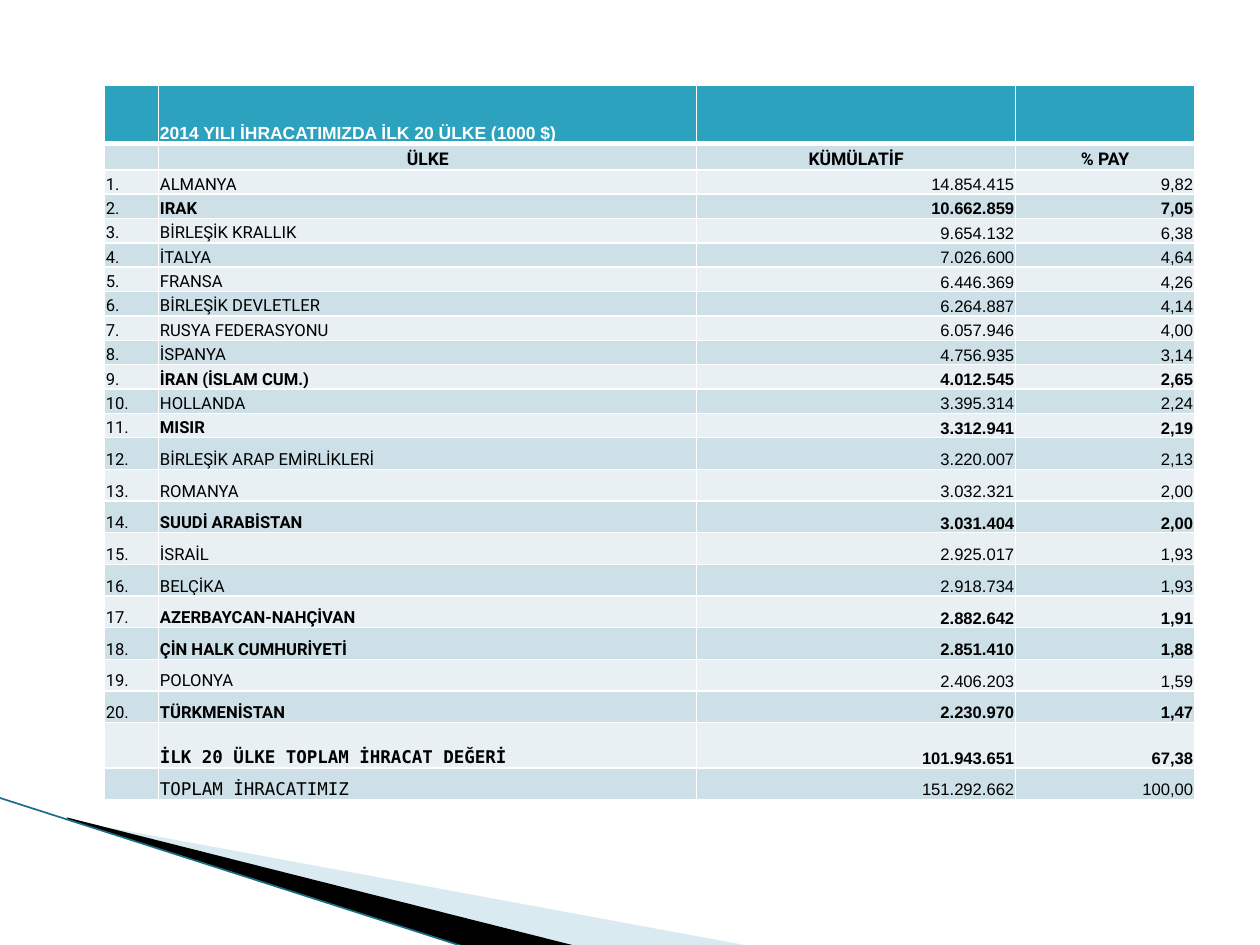
"""Build a slide with Turkey's top 20 export countries of 2014 as a table."""
from lxml.etree import SubElement
from pptx import Presentation
from pptx.dml.color import RGBColor as Color
from pptx.enum.shapes import MSO_CONNECTOR as Connector
from pptx.enum.text import MSO_ANCHOR as Anchor, PP_ALIGN as Align
from pptx.oxml.ns import qn
from pptx.util import Inches, Pt

COLORS = {"header": "2DA2BF", "dark band": "CDE0E8", "light band": "E8F0F4",
          "white": "FFFFFF", "black": "000000", "pale wedge": "A0CBDC", "edge": "1A6E82"}
COUNTRIES = [
    ("ALMANYA", "14.854.415", "9,82"),
    ("IRAK", "10.662.859", "7,05"),
    ("BİRLEŞİK KRALLIK", "9.654.132", "6,38"),
    ("İTALYA", "7.026.600", "4,64"),
    ("FRANSA", "6.446.369", "4,26"),
    ("BİRLEŞİK DEVLETLER", "6.264.887", "4,14"),
    ("RUSYA FEDERASYONU", "6.057.946", "4,00"),
    ("İSPANYA", "4.756.935", "3,14"),
    ("İRAN (İSLAM CUM.)", "4.012.545", "2,65"),
    ("HOLLANDA", "3.395.314", "2,24"),
    ("MISIR", "3.312.941", "2,19"),
    ("BİRLEŞİK ARAP EMİRLİKLERİ", "3.220.007", "2,13"),
    ("ROMANYA", "3.032.321", "2,00"),
    ("SUUDİ ARABİSTAN", "3.031.404", "2,00"),
    ("İSRAİL", "2.925.017", "1,93"),
    ("BELÇİKA", "2.918.734", "1,93"),
    ("AZERBAYCAN-NAHÇİVAN", "2.882.642", "1,91"),
    ("ÇİN HALK CUMHURİYETİ", "2.851.410", "1,88"),
    ("POLONYA", "2.406.203", "1,59"),
    ("TÜRKMENİSTAN", "2.230.970", "1,47"),
]
BOLD_RANKS = {2, 9, 11, 14, 17, 18, 20}

deck = Presentation()
deck.slide_width, deck.slide_height = Inches(10), Inches(7.5)
unit_x, unit_y = deck.slide_width / 1000, deck.slide_height / 1000
slide = deck.slides.add_slide(deck.slide_layouts[6])

wedges = [
    ("pale wedge", 40, [(55, 868), (595, 1001), (456, 1001), (55, 867)]),
    ("black", 100, [(53, 865), (457, 1001), (372, 1003), (54, 867)]),
]
for name, opacity, points in wedges:
    builder = slide.shapes.build_freeform(*points[0], scale=(unit_x, unit_y))
    builder.add_line_segments(points[1:], close=True)
    wedge = builder.convert_to_shape()
    wedge.shadow.inherit = False
    wedge.line.fill.background()
    wedge.fill.solid()
    wedge.fill.fore_color.rgb = Color.from_string(COLORS[name])
    if opacity < 100:
        tint = wedge._element.spPr.find(qn("a:solidFill"))[0]
        SubElement(tint, qn("a:alpha"), val=str(opacity * 1000))

edge = slide.shapes.add_connector(Connector.STRAIGHT, round(-unit_x), round(844 * unit_y),
                                  round(371 * unit_x), round(1003 * unit_y))
edge.line.color.rgb = Color.from_string(COLORS["edge"])
edge.line.width = Pt(0.95)
SubElement(edge._element.spPr, qn("a:effectLst"))

rows = [("", "2014 YILI İHRACATIMIZDA İLK 20 ÜLKE (1000 $)", "", ""),
        ("", "ÜLKE", "KÜMÜLATİF", "% PAY")]
rows += [(f"{rank}.", *country) for rank, country in enumerate(COUNTRIES, 1)]
rows += [("", "İLK 20 ÜLKE TOPLAM İHRACAT DEĞERİ", "101.943.651", "67,38"),
         ("", "TOPLAM İHRACATIMIZ", "151.292.662", "100,00")]
column_widths = [43, 427, 253, 142]
row_heights = [61, 28] + [25.8] * 11 + [33.5] * 9 + [48, 33.5]
total_row = len(rows) - 2

table = slide.shapes.add_table(len(rows), 4, round(83 * unit_x), round(90.7 * unit_y),
                               round(sum(column_widths) * unit_x),
                               round(sum(row_heights) * unit_y)).table
for column, width in zip(table.columns, column_widths):
    column.width = round(width * unit_x)
for row, height in zip(table.rows, row_heights):
    row.height = round(height * unit_y)

for r, texts in enumerate(rows):
    rank = r - 1
    band = "header" if r == 0 else "dark band" if r % 2 else "light band"
    for c, text in enumerate(texts):
        cell = table.cell(r, c)
        cell.margin_left = cell.margin_right = cell.margin_top = Inches(0.01)
        cell.margin_bottom = 0
        cell.vertical_anchor = Anchor.BOTTOM
        for side in ("lnL", "lnR", "lnT", "lnB"):
            if side == "lnT" and r > 0:
                continue
            width = Pt(3) if r == 0 and side == "lnB" else Pt(1)
            border = SubElement(cell._tc.get_or_add_tcPr(), qn(f"a:{side}"), w=str(width))
            SubElement(SubElement(border, qn("a:solidFill")), qn("a:srgbClr"), val=COLORS["white"])
        cell.fill.solid()
        cell.fill.fore_color.rgb = Color.from_string(COLORS[band])

        para = cell.text_frame.paragraphs[0]
        if not text:
            SubElement(para._p, qn("a:endParaRPr"), sz="950")
            continue
        para.text = text
        para.alignment = Align.CENTER if r == 1 else Align.RIGHT if c > 1 else Align.LEFT
        font = para.font
        font.size = Pt(10 if r < 2 or (r >= total_row and c == 1) else 9.5)
        font.bold = r < 2 or r == total_row or (c > 0 and rank in BOLD_RANKS)
        font.color.rgb = Color.from_string(COLORS["white" if r == 0 else "black"])
        if r >= total_row and c == 1:
            font.name = "DejaVu Sans Mono"
        else:
            font.name = "Arial" if r == 0 or (r > 1 and c > 1) else "Roboto"

deck.save("out.pptx")
